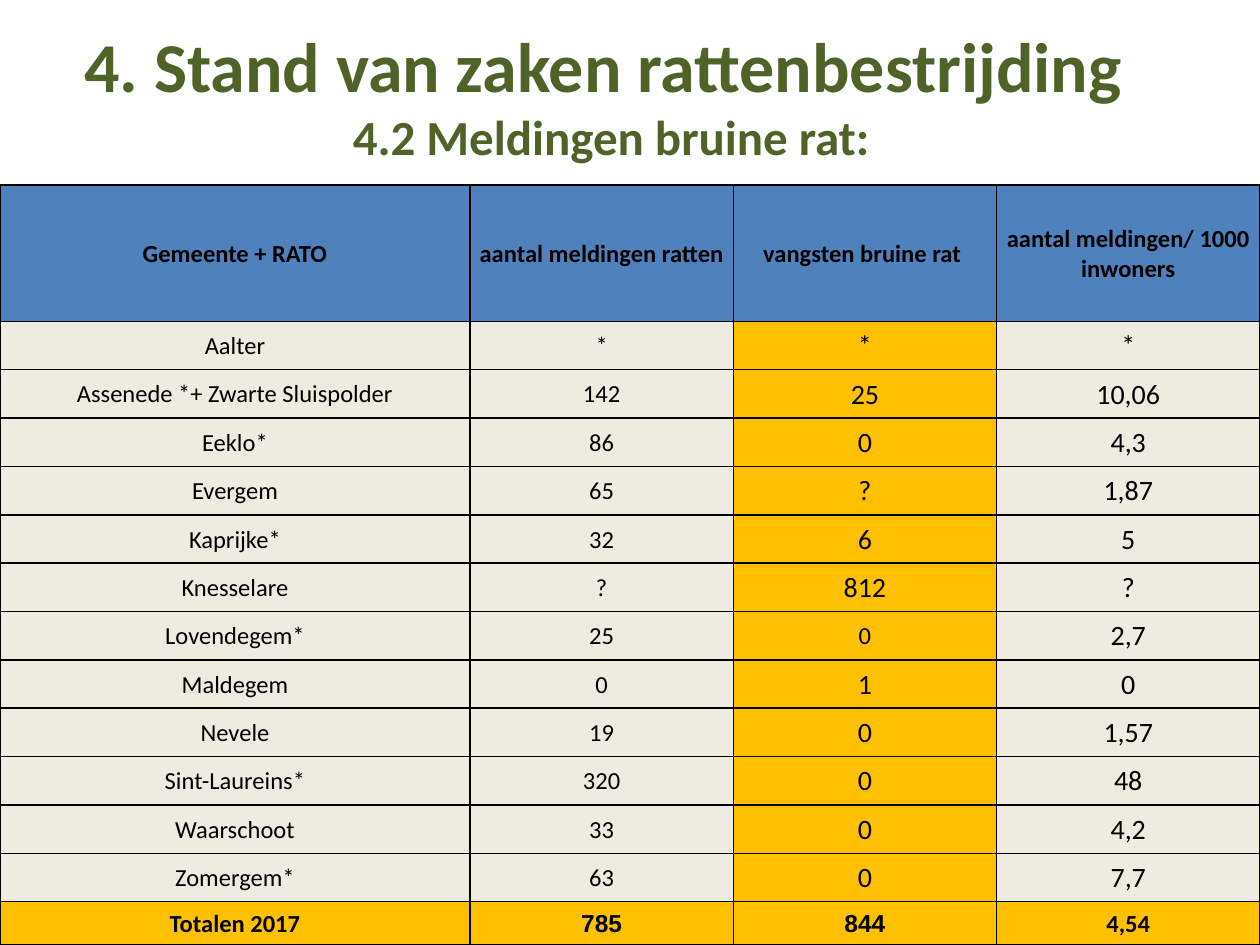
from lxml import etree
from pptx import Presentation
from pptx.dml.color import RGBColor
from pptx.enum import text
from pptx.oxml import ns
from pptx.util import Inches, Pt

COLORS = {"title": "4F6228", "header": "4F81BD", "body": "EEECE1",
          "accent": "FFC000", "black": "000000"}
HEADER = ["Gemeente + RATO", "aantal meldingen ratten",
          "vangsten bruine rat ", "aantal meldingen/ 1000 inwoners"]
REPORTS = [
    ["Aalter", "*", "*", "*"],
    ["Assenede *+ Zwarte Sluispolder", "142", "25", "10,06"],
    ["Eeklo*", "86", "0", "4,3"],
    ["Evergem", "65", "?", "1,87"],
    ["Kaprijke*", "32", "6", "5"],
    ["Knesselare", "?", "812", "?"],
    ["Lovendegem*", "25", "0", "2,7"],
    ["Maldegem", "0", "1", "0"],
    ["Nevele", "19", "0", "1,57"],
    ["Sint-Laureins*", "320", "0", "48"],
    ["Waarschoot", "33", "0", "4,2"],
    ["Zomergem*", "63", "0", "7,7"],
]
TOTALS = ["Totalen 2017", "785", "844", "4,54"]


def write(para, words, size, color, bold=True, name="Calibri"):
    para.alignment = text.PP_ALIGN.CENTER
    span = para.add_run()
    span.text = words
    for key, value in {"size": Pt(size), "bold": bold, "name": name}.items():
        setattr(span.font, key, value)
    span.font.color.rgb = RGBColor.from_string(COLORS[color])


def add_borders(cell):
    """Draw a 1 pt black line on all four sides, ahead of the cell fill."""
    properties = cell._tc.get_or_add_tcPr()
    for index, side in enumerate(("lnL", "lnR", "lnT", "lnB")):
        line = etree.Element(ns.qn("a:" + side), w=str(Pt(1)))
        fill = etree.SubElement(line, ns.qn("a:solidFill"))
        etree.SubElement(fill, ns.qn("a:srgbClr"), val=COLORS["black"])
        properties.insert(index, line)


deck = Presentation()
deck.slide_width, deck.slide_height = Inches(10), Inches(7.5)
page = deck.slides.add_slide(deck.slide_layouts[5])

title = page.shapes.title
title.left, title.top = Inches(0.35), Inches(0.13)
title.width, title.height = Inches(9), Inches(5.42)
frame = title.text_frame
frame.word_wrap = True
frame.auto_size = text.MSO_AUTO_SIZE.NONE
frame.vertical_anchor = text.MSO_ANCHOR.TOP
write(frame.paragraphs[0], "4. Stand van zaken rattenbestrijding ", 40, "title")
write(frame.add_paragraph(), "4.2 Meldingen bruine rat:", 28, "title")

rows = [HEADER, *REPORTS, TOTALS]
last = len(rows) - 1
table = page.shapes.add_table(len(rows), len(HEADER), Inches(0), Inches(1.47),
                              Inches(10), Inches(6.03)).table
for column, width in zip(table.columns, (3.73, 2.09, 2.09, 2.09)):
    column.width = Inches(width)
report_height = (6.03 - 1.08 - 0.34) / len(REPORTS)
for row, height in zip(table.rows, [1.08] + [report_height] * len(REPORTS) + [0.34]):
    row.height = Inches(height)

cell_format = {"margin_left": Inches(0.01), "margin_right": Inches(0.01),
               "margin_top": Inches(0.01), "margin_bottom": 0,
               "vertical_anchor": text.MSO_ANCHOR.MIDDLE}
for r, values in enumerate(rows):
    for c, value in enumerate(values):
        cell = table.cell(r, c)
        for key, setting in cell_format.items():
            setattr(cell, key, setting)
        if r == 0:
            color = "header"
        else:
            color = "accent" if r == last or c == 2 else "body"
        cell.fill.solid()
        cell.fill.fore_color.rgb = RGBColor.from_string(COLORS[color])
        add_borders(cell)

        is_report = 0 < r < last
        large = is_report and c >= 2 and (values[0], c) != ("Lovendegem*", 2)
        write(cell.text_frame.paragraphs[0], value, 16 if large else 14, "black",
              bold=not is_report,
              name="Arial" if r == last and c in (1, 2) else "Calibri")

deck.save("out.pptx")
